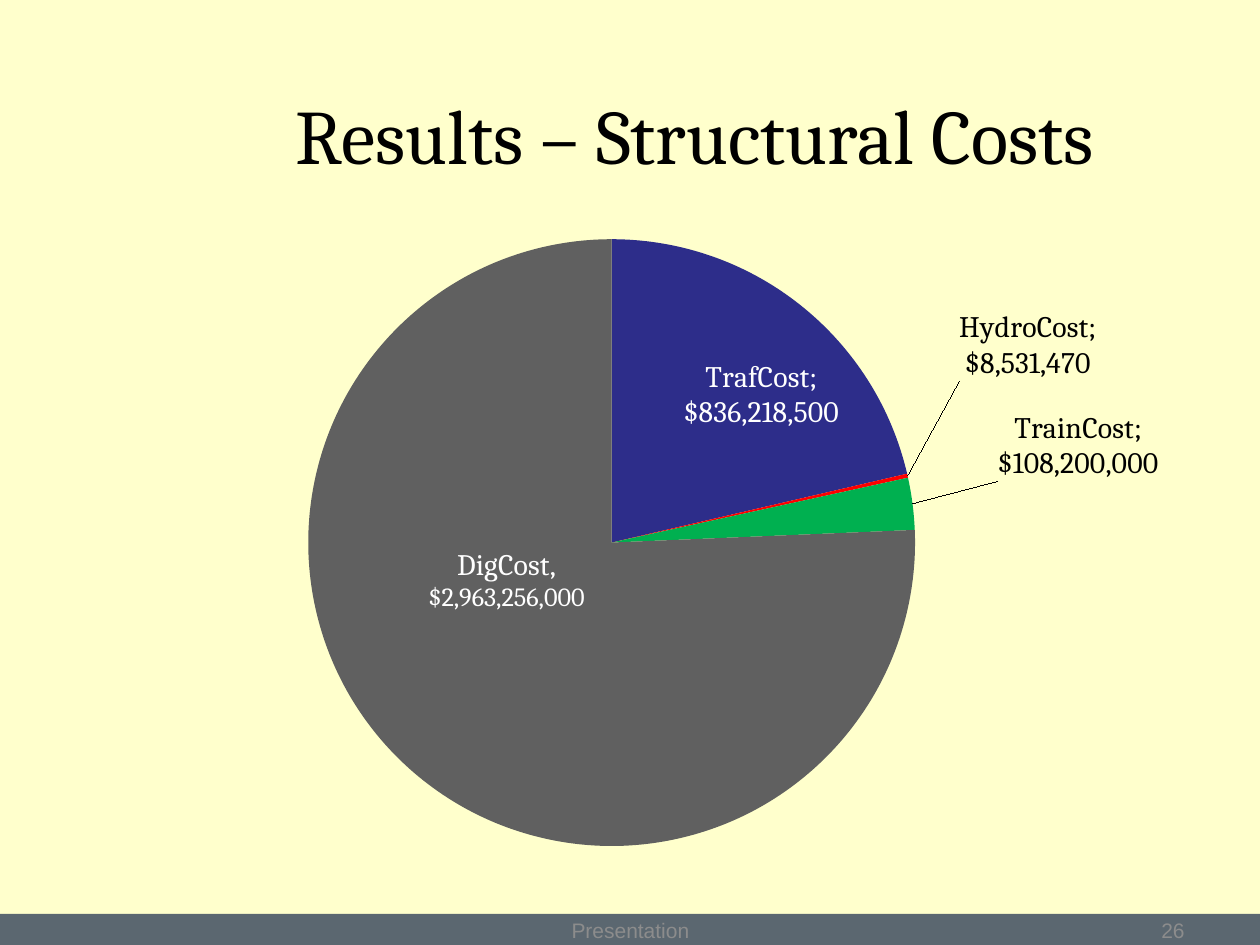
"""Build the structural costs slide with its pie chart."""
from lxml import etree
from pptx import Presentation
from pptx import util as u
from pptx.chart.data import CategoryChartData
from pptx.dml.color import RGBColor
from pptx.enum import chart as ch, shapes, text
from pptx.oxml import ns

SCALE = 914400 // 126
CREAM = RGBColor(0xFF, 0xFF, 0xCC)
SLATE = RGBColor(0x5B, 0x67, 0x70)
GRAY = RGBColor(0x8C, 0x8C, 0x8C)
BLACK = RGBColor(0, 0, 0)
WHITE = RGBColor(0xFF, 0xFF, 0xFF)
NAVY = RGBColor(0x2D, 0x2D, 0x8A)
RED = RGBColor(0xFF, 0, 0)
GREEN = RGBColor(0, 0xB0, 0x50)
DARK = RGBColor(0x60, 0x60, 0x60)
MONEY = '"$"#,##0'
PLACE = ch.XL_LABEL_POSITION
COSTS = [
    ("TrafCost", 836218500, NAVY, WHITE, PLACE.CENTER, 0.05, -0.04),
    ("HydroCost", 8531470, RED, BLACK, PLACE.OUTSIDE_END, 0.04, -0.13),
    ("TrainCost", 108200000, GREEN, BLACK, PLACE.OUTSIDE_END, 0.07, -0.03),
    ("DigCost", 2963256000, DARK, WHITE, PLACE.CENTER, 0, -0.1),
]


def px(*vals):
    """Turn pixels into EMU."""
    return [u.Emu(val * SCALE) for val in vals]


def style(font, name, size, color):
    """Set the look of a font."""
    for key, val in {"name": name, "size": u.Pt(size), "bold": False}.items():
        setattr(font, key, val)
    font.color.rgb = color


def add_bar(slide, box, color):
    """Add a plain filled bar."""
    bar = slide.shapes.add_shape(shapes.MSO_SHAPE.RECTANGLE, *px(*box))
    bar.shadow.inherit = False
    bar.fill.solid()
    bar.fill.fore_color.rgb = color
    bar.line.fill.background()


def add_text(slide, box, words, align, name, size, color):
    """Add one line of text, centred in height."""
    frame = slide.shapes.add_textbox(*px(*box)).text_frame
    frame.word_wrap = True
    frame.vertical_anchor = text.MSO_ANCHOR.MIDDLE
    para = frame.paragraphs[0]
    para.text = words
    para.alignment = align
    style(para.font, name, size, color)


def add_tag(parent, name, **attrs):
    """Append a chart element and return it."""
    return etree.SubElement(parent, ns.qn(f"c:{name}"), attrs)


def make_layout(inner=False, **sides):
    """Make a manual layout from fractions of the chart."""
    layout = etree.Element(ns.qn("c:layout"))
    manual = add_tag(layout, "manualLayout")
    if inner:
        add_tag(manual, "layoutTarget", val="inner")
        for side in "xy":
            add_tag(manual, f"{side}Mode", val="edge")
    for side, val in sides.items():
        add_tag(manual, side, val=str(val))
    return layout


def set_label(label, color, place):
    """Style the label of one slice."""
    style(label.font, "Cambria", 17, color)
    label.position = place


def set_total(label):
    """Write the two-line label of the largest slice."""
    para = label.text_frame.paragraphs[0]
    for words, size in (("DigCost, ", 17), ("$2,963,256,000", 15)):
        run = para.add_run()
        run.text = words
        style(run.font, "Cambria", size, WHITE)


def add_pie(slide, box):
    """Add the pie chart of costs."""
    data = CategoryChartData(number_format=MONEY)
    data.categories = [cost[0] for cost in COSTS]
    data.add_series("Series 1", [cost[1] for cost in COSTS])
    kind = ch.XL_CHART_TYPE.PIE
    chart = slide.shapes.add_chart(kind, *px(*box), data).chart
    chart.has_legend = chart.has_title = False
    style(chart.font, "Arial", 10, BLACK)
    plot = chart.plots[0]
    plot.vary_by_categories = True
    ser = plot.series[0]
    labels = ser.data_labels
    for key in ("show_value", "show_category_name"):
        setattr(labels, key, True)
    labels.number_format = MONEY
    labels.number_format_is_linked = False
    style(labels.font, "Cambria", 17, BLACK)
    for i, (_, _, fill, color, place, _, _) in enumerate(COSTS):
        point = ser.points[i]
        point.format.fill.solid()
        point.format.fill.fore_color.rgb = fill
        point.format.line.fill.background()
        set_label(point.data_label, color, place)
    set_total(point.data_label)
    root = ser._element
    for lead in root.xpath("c:dLbls/c:showLeaderLines"):
        lead.set("val", "1")
    for node, cost in zip(root.xpath(".//c:dLbl"), COSTS):
        node[0].addnext(make_layout(x=cost[5], y=cost[6]))
        for show in node.xpath("c:showCatName"):
            show.set("val", "1")
    area = chart._chartSpace.chart.plotArea
    for old in area.xpath("c:layout"):
        area.remove(old)
    area.insert(0, make_layout(True, x=0.2, y=0.09, w=0.55, h=0.85))


def main():
    """Build and save the slide."""
    deck = Presentation()
    deck.slide_width, deck.slide_height = px(1260, 945)
    slide = deck.slides.add_slide(deck.slide_layouts[6])
    slide.background.fill.solid()
    slide.background.fill.fore_color.rgb = CREAM
    add_bar(slide, (0, 914, 1260, 31), SLATE)
    mid, right = text.PP_ALIGN.CENTER, text.PP_ALIGN.RIGHT
    add_text(slide, (164, 55, 1062, 158), "Results – Structural Costs",
             mid, "Cambria", 44, BLACK)
    add_text(slide, (431, 905, 399, 50), "Presentation", mid, "Arial", 12, GRAY)
    add_text(slide, (903, 905, 294, 50), "26", right, "Arial", 12, GRAY)
    add_pie(slide, (84, 175, 1111, 714))
    deck.save("out.pptx")


if __name__ == "__main__":
    main()
